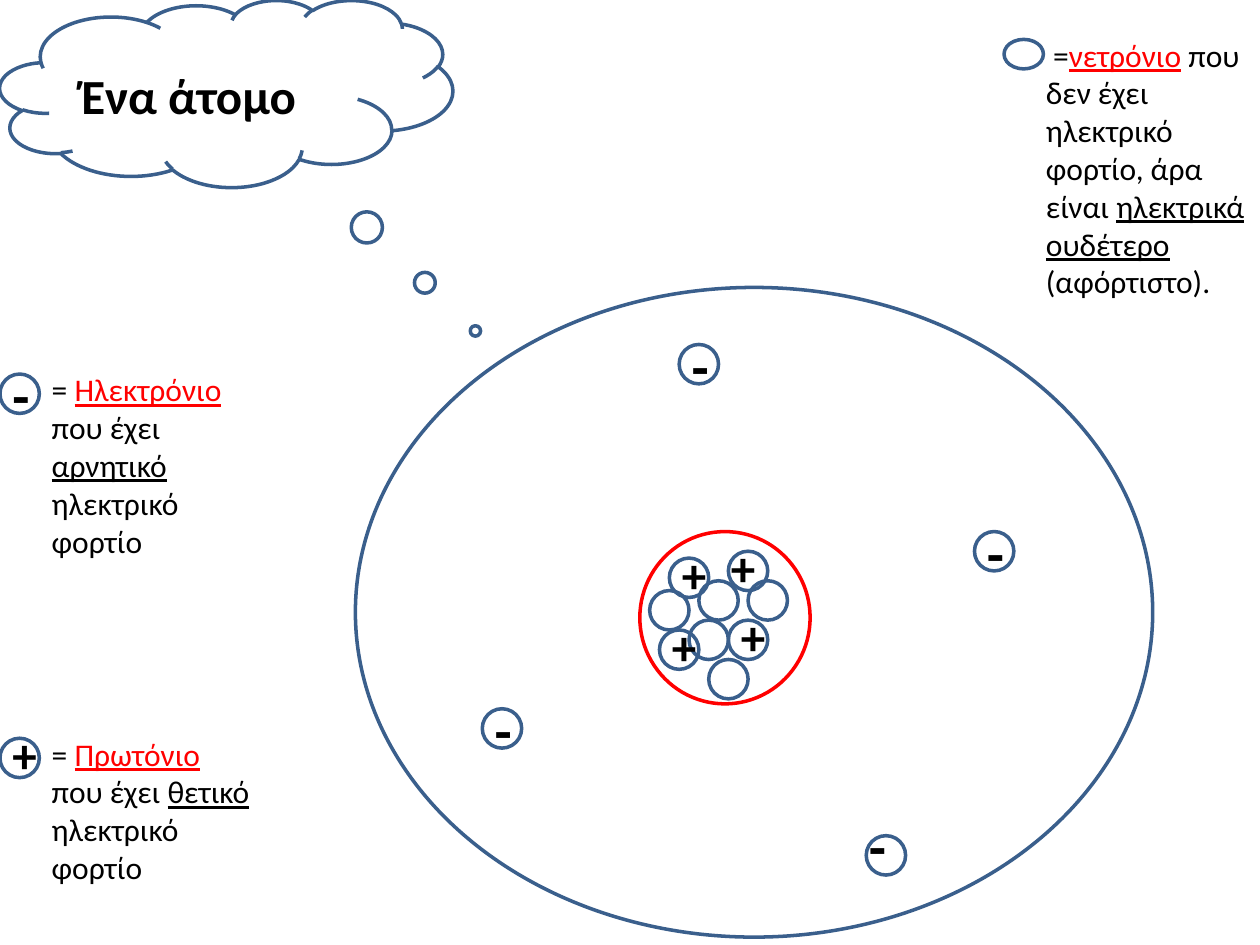
from dataclasses import dataclass

from pptx import Presentation
from pptx import util as u
from pptx.dml.color import RGBColor
from pptx.enum import shapes, text

BLUE = RGBColor(0x3A, 0x5F, 0x8C)
RED = RGBColor(0xFF, 0x00, 0x00)
BLACK = RGBColor(0x00, 0x00, 0x00)

# The slide is a grid of square cells
COLUMNS, ROWS = 128, 96
CELL = u.Inches(10) / COLUMNS
SIGN_SIZES = {"+": 28, "-": 32}
SIGN_HEIGHTS = {"+": 7.3, "-": 8.2}


@dataclass
class Box:
    column: float
    row: float
    width: float
    height: float

    def lengths(self) -> list[u.Emu]:
        cells = (self.column, self.row, self.width, self.height)
        return [u.Emu(round(value * CELL)) for value in cells]


@dataclass
class Particle:
    column: float
    row: float
    sign: str = ""
    sign_shift: tuple[float, float] = (0, -2)
    sign_width: float = 5
    height: float = 4


@dataclass
class Run:
    words: str
    color: RGBColor = BLACK
    underline: bool = False


@dataclass
class Legend:
    particle: Particle
    box: Box
    runs: list[Run]


ELECTRONS = [
    Particle(99, 54, "-"),
    Particle(49, 72, "-"),
    Particle(69, 35, "-"),
    Particle(88, 84.9, "-", (-1, -3.1)),
]
NEUTRONS = [
    Particle(column, row)
    for column, row in [(70, 63), (76, 59), (71, 59), (66, 60), (72, 67)]
]
PROTONS = [
    Particle(74, 63, "+"),
    Particle(74, 56, "+", (-1, -2), 3),
    Particle(67, 64, "+", sign_width=3),
    Particle(68, 56.7, "+", sign_width=3),
]
LEGENDS = [
    Legend(Particle(102, 4, height=3), Box(105, 3, 23, 28.4), [
        Run(" ="),
        Run("νετρόνιο", RED, True),
        Run(" που δεν έχει ηλεκτρικό φορτίο, άρα είναι "),
        Run("ηλεκτρικά ουδέτερο ", underline=True),
        Run("(αφόρτιστο)."),
    ]),
    Legend(Particle(0, 38, "-"), Box(4, 37, 23, 20.7), [
        Run("= "),
        Run("Ηλεκτρόνιο", RED, True),
        Run(" που έχει "),
        Run("αρνητικό", underline=True),
        Run(" ηλεκτρικό φορτίο"),
    ]),
    Legend(Particle(0, 75, "+"), Box(4, 74, 23, 16.8), [
        Run("= "),
        Run("Πρωτόνιο", RED, True),
        Run(" που έχει "),
        Run("θετικό", underline=True),
        Run(" ηλεκτρικό φορτίο"),
    ]),
]


def add_outline(slide, box: Box, color: RGBColor = BLUE,
                kind=shapes.MSO_SHAPE.OVAL):
    shape = slide.shapes.add_shape(kind, *box.lengths())
    shape.shadow.inherit = False
    shape.fill.background()
    shape.line.color.rgb = color
    shape.line.width = u.Pt(2)
    return shape


def add_text(slide, box: Box, runs: list[Run], size: float,
             bold: bool = False) -> None:
    frame = slide.shapes.add_textbox(*box.lengths()).text_frame
    frame.word_wrap = True
    frame.auto_size = text.MSO_AUTO_SIZE.SHAPE_TO_FIT_TEXT
    paragraph = frame.paragraphs[0]
    paragraph.font.name = "Calibri"
    paragraph.font.size = u.Pt(size)
    paragraph.font.bold = bold
    for part in runs:
        run = paragraph.add_run()
        run.text = part.words
        run.font.color.rgb = part.color
        run.font.underline = part.underline


def add_particle(slide, particle: Particle) -> None:
    add_outline(slide, Box(particle.column, particle.row, 4, particle.height))
    if particle.sign:
        right, down = particle.sign_shift
        box = Box(particle.column + right, particle.row + down,
                  particle.sign_width, SIGN_HEIGHTS[particle.sign])
        add_text(slide, box, [Run(particle.sign)],
                 SIGN_SIZES[particle.sign], bold=True)


def main() -> None:
    presentation = Presentation()
    presentation.slide_width = u.Emu(round(COLUMNS * CELL))
    presentation.slide_height = u.Emu(round(ROWS * CELL))
    slide = presentation.slides.add_slide(presentation.slide_layouts[6])

    # Title in a thought bubble that points at the atom
    cloud = add_outline(slide, Box(0, 0, 46, 19),
                        kind=shapes.MSO_SHAPE.CLOUD_CALLOUT)
    cloud.adjustments[0] = 0.55
    cloud.adjustments[1] = 1.27
    add_text(slide, Box(7, 6, 34, 7.3), [Run("Ένα άτομο")], 28, bold=True)

    # Atom with its particles
    add_outline(slide, Box(36.1, 29.2, 81, 66))
    for particle in ELECTRONS + NEUTRONS + PROTONS:
        add_particle(slide, particle)

    # Legends
    for legend in LEGENDS:
        add_particle(slide, legend.particle)
        add_text(slide, legend.box, legend.runs, 18)

    # Boundary of the nucleus
    add_outline(slide, Box(65, 54, 17.3, 17.5), RED)

    presentation.save("out.pptx")


if __name__ == "__main__":
    main()
